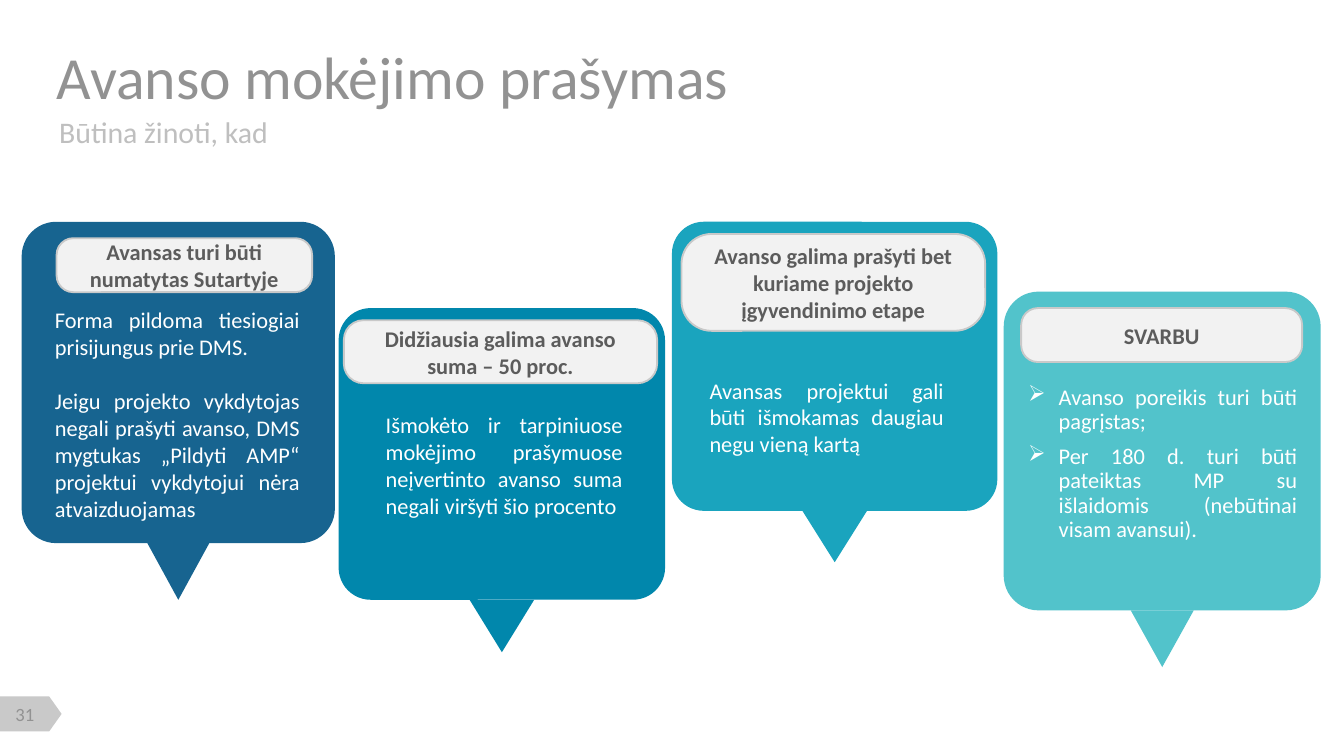
"""Build the slide on advance payment requests with four callout cards."""
from lxml.etree import SubElement
from pptx import Presentation
from pptx.dml.color import RGBColor
from pptx.enum.shapes import MSO_SHAPE
from pptx.enum.text import MSO_ANCHOR, PP_ALIGN
from pptx.oxml.ns import qn
from pptx.util import Cm, Pt

NAVY = RGBColor(0x17, 0x64, 0x90)
BLUE = RGBColor(0x01, 0x87, 0xAC)
TEAL = RGBColor(0x1A, 0xA4, 0xBE)
AQUA = RGBColor(0x52, 0xC3, 0xCB)
WHITE = RGBColor(0xFF, 0xFF, 0xFF)
PALE = RGBColor(0xF2, 0xF2, 0xF2)
SILVER = RGBColor(0xC9, 0xC9, 0xC9)
LIGHT_GREY = RGBColor(0xBF, 0xBF, 0xBF)
GREY = RGBColor(0x92, 0x92, 0x92)
DARK_GREY = RGBColor(0x5C, 0x5C, 0x5C)

deck = Presentation()
deck.slide_width = Cm(25.4)
deck.slide_height = Cm(14.28)
page = deck.slides.add_slide(deck.slide_layouts[6])


def add_filled(kind, left, top, width, height, color):
    shape = page.shapes.add_shape(kind, Cm(left), Cm(top), Cm(width), Cm(height))
    shape.shadow.inherit = False
    shape.fill.solid()
    shape.fill.fore_color.rgb = color
    shape.line.fill.background()
    return shape


def add_span(para, text, size, color, bold=False):
    span = para.add_run()
    span.text = text
    span.font.name = "Calibri"
    span.font.size = Pt(size)
    span.font.bold = bold
    span.font.color.rgb = color


marker = add_filled(MSO_SHAPE.FLOWCHART_OFFPAGE_CONNECTOR, 0.25, 12.9, 0.66, 1.17, SILVER)
marker.rotation = 270

headings = [
    ("31", 10, GREY, PP_ALIGN.CENTER, (0.05, 13.28, 0.84, 0.43)),
    ("Būtina žinoti, kad", 16, LIGHT_GREY, PP_ALIGN.LEFT, (1.12, 2.24, 23.24, 0.48)),
    ("Avanso mokėjimo prašymas", 32, GREY, PP_ALIGN.LEFT, (1.07, 0.94, 23.24, 0.99)),
]
for text, size, color, align, place in headings:
    box = page.shapes.add_textbox(*map(Cm, place))
    frame = box.text_frame
    frame.word_wrap = True
    frame.vertical_anchor = MSO_ANCHOR.MIDDLE
    frame.margin_left = frame.margin_right = frame.margin_top = frame.margin_bottom = 0
    para = frame.paragraphs[0]
    para.alignment = align
    add_span(para, text, size, color)

cards = [
    (NAVY, (0.41, 4.19, 5.92, 6.07), (1.17, 1.07), (1.07, 4.5, 4.83, 1.02),
     "Avansas turi būti numatytas Sutartyje", (0.79, 5.66, 5.13, 4.37), False,
     ["Forma pildoma tiesiogiai prisijungus prie DMS.",
      "Jeigu projekto vykdytojas negali prašyti avanso, DMS mygtukas „Pildyti AMP“ "
      "projektui vykdytojui nėra atvaizduojamas"]),
    (BLUE, (6.4, 5.82, 6.17, 5.51), (1.22, 0.99), (6.5, 6.05, 5.92, 1.19),
     "Didžiausia galima avanso suma – 50 proc.", (7.04, 7.65, 4.98, 2.31), False,
     ["Išmokėto ir tarpiniuose mokėjimo prašymuose neįvertinto avanso suma "
      "negali viršyti šio procento"]),
    (TEAL, (12.7, 4.19, 6.15, 5.46), (1.22, 0.97), (12.88, 4.42, 5.74, 1.83),
     "Avanso galima prašyti bet kuriame projekto įgyvendinimo etape",
     (13.16, 6.99, 4.93, 1.8), False,
     ["Avansas projektui gali būti išmokamas daugiau negu vieną kartą"]),
    (AQUA, (18.97, 5.51, 5.99, 6.02), (1.19, 1.07), (19.3, 5.82, 5.31, 1.02),
     "SVARBU", (19.18, 7.16, 5.59, 3.2), True,
     ["Avanso poreikis turi būti pagrįstas;",
      "Per 180 d. turi būti pateiktas MP su išlaidomis (nebūtinai visam avansui)."]),
]
for color, card_place, pointer_size, label_place, title, text_place, bulleted, texts in cards:
    left, top, width, height = card_place
    pointer_width, pointer_height = pointer_size
    pointer = add_filled(MSO_SHAPE.ISOSCELES_TRIANGLE, left + (width - pointer_width) / 2,
                         top + height, pointer_width, pointer_height, color)
    pointer.rotation = 180
    card = add_filled(MSO_SHAPE.ROUNDED_RECTANGLE, *card_place, color)
    card.adjustments[0] = 0.11

    label = add_filled(MSO_SHAPE.ROUNDED_RECTANGLE, *label_place, PALE)
    label.adjustments[0] = 0.31
    label.line.color.rgb = SILVER
    label.line.width = Pt(1)
    label.text_frame.word_wrap = True
    label.text_frame.vertical_anchor = MSO_ANCHOR.MIDDLE
    para = label.text_frame.paragraphs[0]
    para.alignment = PP_ALIGN.CENTER
    add_span(para, title, 12, DARK_GREY, bold=True)

    box = page.shapes.add_textbox(*map(Cm, text_place))
    frame = box.text_frame
    frame.word_wrap = True
    for index, text in enumerate(texts):
        para = frame.add_paragraph() if index else frame.paragraphs[0]
        para.alignment = PP_ALIGN.JUSTIFY
        if bulleted:
            para.line_spacing = 0.9
            para.space_after = Pt(6)
            properties = para._p.get_or_add_pPr()
            properties.set("marL", str(Cm(0.58)))
            properties.set("indent", str(Cm(-0.58)))
            SubElement(properties, qn("a:buChar"), char="➢")
        elif index:
            para.space_before = Pt(14.6)
        add_span(para, text, 12, WHITE)

deck.save("out.pptx")
